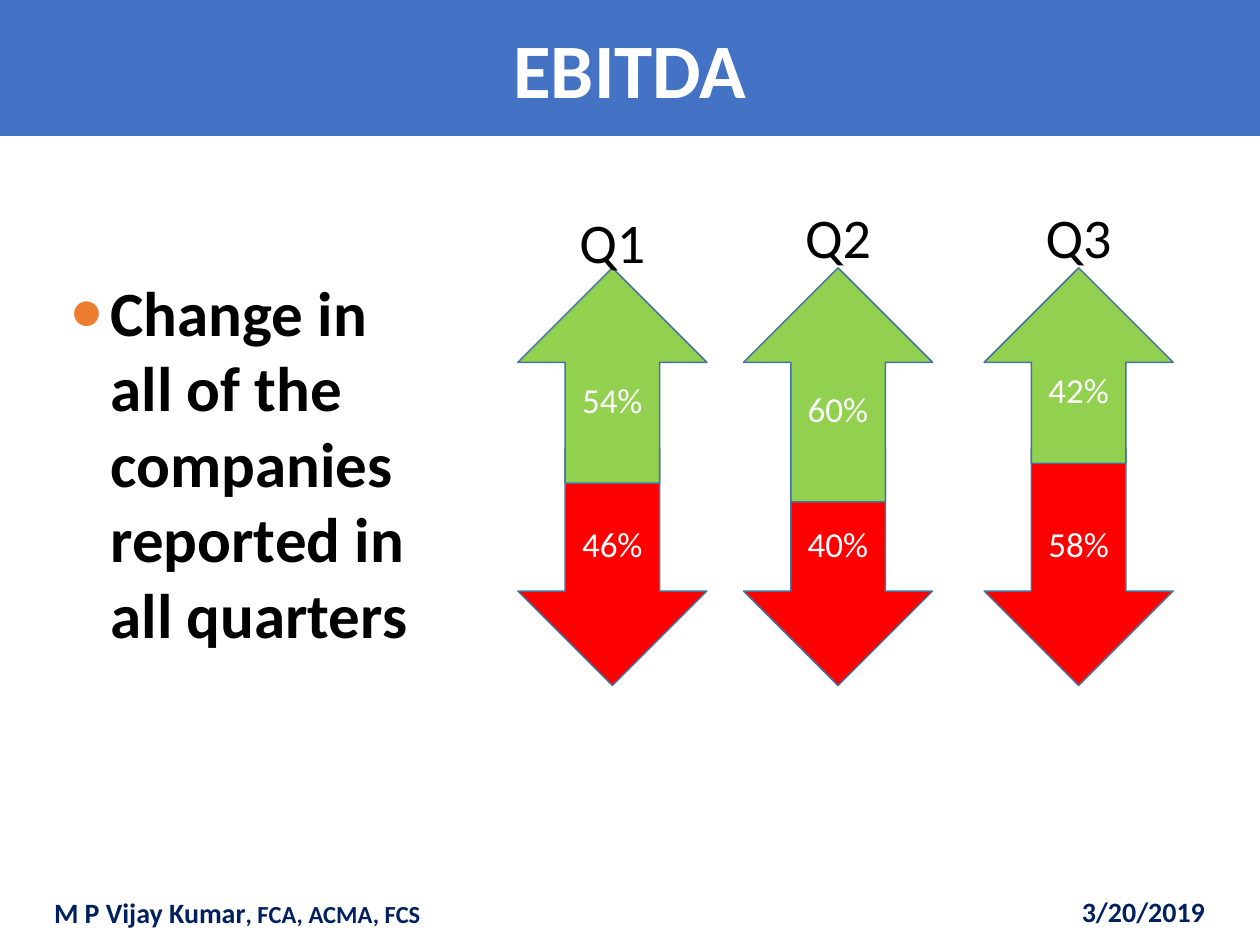
"""Build the EBITDA slide with quarterly up and down arrows."""
from lxml.etree import SubElement
from pptx import Presentation
from pptx.dml.color import RGBColor
from pptx.enum.shapes import MSO_SHAPE
from pptx.enum.text import MSO_ANCHOR, PP_ALIGN
from pptx.oxml.ns import qn
from pptx.util import Cm, Pt

FONT = "Calibri"
WHITE = RGBColor(0xFF, 0xFF, 0xFF)
BLACK = RGBColor(0x00, 0x00, 0x00)
BLUE = RGBColor(0x44, 0x72, 0xC4)
NAVY = RGBColor(0x00, 0x20, 0x60)
GREEN = RGBColor(0x92, 0xD0, 0x50)
RED = RGBColor(0xFF, 0x00, 0x00)
ORANGE = RGBColor(0xED, 0x7D, 0x31)
OUTLINE = RGBColor(0x43, 0x73, 0x9E)

ARROW_WIDTH = 3.81
ARROW_TOP = 5.4
DOWN_TOP, DOWN_HEIGHT = 9.04, 4.78
LABEL_WIDTH, LABEL_HEIGHT = 2.26, 1.62
QUARTERS = [
    ("Q1", 10.44, 4.06, "54%", 4.34, "46%"),
    ("Q2", 14.99, 3.96, "60%", 4.72, "40%"),
    ("Q3", 19.84, 3.96, "42%", 3.94, "58%"),
]


def style_paragraph(paragraph, size, color, align, bold=False):
    paragraph.alignment = align
    font = paragraph.font
    font.name, font.size, font.bold = FONT, Pt(size), bold
    font.color.rgb = color


def add_block(page, kind, place, fill, text, size, bold=False, line=None):
    block = page.shapes.add_shape(kind, *map(Cm, place))
    block.shadow.inherit = False
    block.fill.solid()
    block.fill.fore_color.rgb = fill
    if line is None:
        block.line.fill.background()
    else:
        block.line.color.rgb = line
        block.line.width = Pt(0.85)
    frame = block.text_frame
    frame.text = text
    frame.vertical_anchor = MSO_ANCHOR.MIDDLE
    style_paragraph(frame.paragraphs[0], size, WHITE, PP_ALIGN.CENTER, bold)


def add_text(page, place, text, size, color, align=PP_ALIGN.LEFT, bold=False):
    box = page.shapes.add_textbox(*map(Cm, place))
    box.text_frame.word_wrap = True
    paragraph = box.text_frame.paragraphs[0]
    paragraph.text = text
    style_paragraph(paragraph, size, color, align, bold)
    return paragraph


def add_bullet(paragraph, symbol, color, percent, indent):
    properties = paragraph._p.get_or_add_pPr()
    properties.set("marL", str(Cm(indent)))
    properties.set("indent", str(-Cm(indent)))
    paragraph.space_before = Pt(2)
    tint = SubElement(properties, qn("a:buClr"))
    SubElement(tint, qn("a:srgbClr"), val=str(color))
    SubElement(properties, qn("a:buSzPct"), val=str(percent * 1000))
    SubElement(properties, qn("a:buFont"), typeface=FONT)
    SubElement(properties, qn("a:buChar"), char=symbol)
    properties.append(properties.find(qn("a:defRPr")))


def add_quarter(page, name, left, label_top, rise, rise_height, fall):
    add_block(page, MSO_SHAPE.DOWN_ARROW, (left, DOWN_TOP, ARROW_WIDTH, DOWN_HEIGHT),
              RED, fall, 20, line=OUTLINE)
    add_block(page, MSO_SHAPE.UP_ARROW, (left, ARROW_TOP, ARROW_WIDTH, rise_height),
              GREEN, rise, 20, line=OUTLINE)
    label_left = left + (ARROW_WIDTH - LABEL_WIDTH) / 2
    add_text(page, (label_left, label_top, LABEL_WIDTH, LABEL_HEIGHT),
             name, 32, BLACK, PP_ALIGN.CENTER)


def main():
    deck = Presentation()
    deck.slide_width, deck.slide_height = Cm(25.4), Cm(19.05)
    page = deck.slides.add_slide(deck.slide_layouts[6])

    add_block(page, MSO_SHAPE.RECTANGLE, (0, 0, 25.4, 2.74), BLUE, "EBITDA", 44, bold=True)
    message = add_text(page, (1.17, 5.38, 7.95, 9.53),
                       "Change in all of the companies reported in all quarters",
                       36, BLACK, bold=True)
    add_bullet(message, "●", ORANGE, 85, 0.81)

    for quarter in QUARTERS:
        add_quarter(page, *quarter)

    add_text(page, (16.08, 17.91, 8.46, 1.02), "3/20/2019", 16, NAVY, PP_ALIGN.RIGHT, True)
    author = add_text(page, (0.84, 17.93, 9.96, 1.02), "M P Vijay Kumar", 16, NAVY, bold=True)
    span = author.add_run()
    span.text = ", FCA, ACMA, FCS"
    span.font.size = Pt(14)

    deck.save("out.pptx")


if __name__ == "__main__":
    main()
